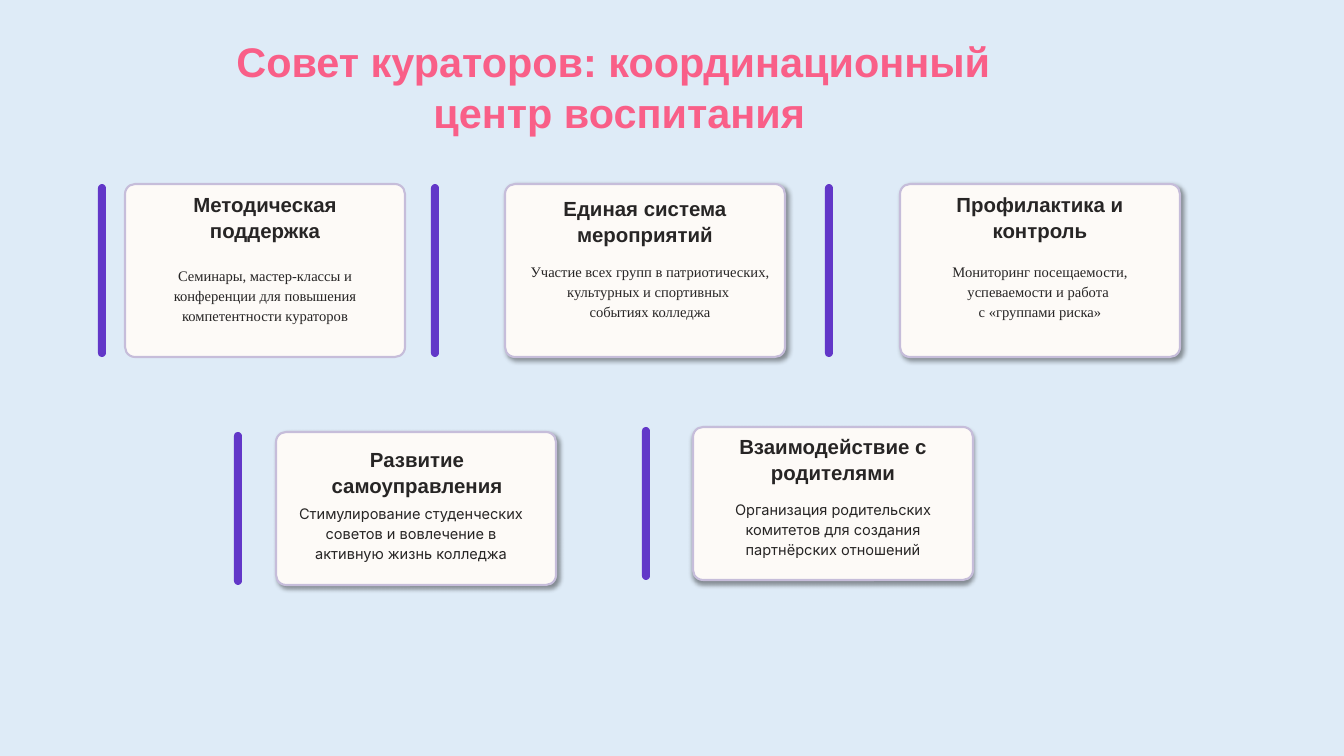
"""Build a slide of five cards on the work of the council of curators."""
from dataclasses import dataclass

from lxml import etree
from pptx import Presentation
from pptx import util as u
from pptx.dml.color import RGBColor
from pptx.enum import shapes, text
from pptx.oxml.ns import qn

PX_PER_INCH = 84
CARD_WIDTH = 280
TEXT_WIDTH = 240
HEADING_HEIGHT = 52
BAR_WIDTH = 8
CORNER = 10


@dataclass(frozen=True)
class TextStyle:
    """Describe the type of one kind of text."""
    font: str
    size: float
    leading: int
    color: str
    bold: bool = False


class Theme:
    """Hold the colours and type styles of the slide."""
    background = "DEEBF7"
    card = "FDFAF7"
    border = "C6BDDA"
    border_width = 1.8
    bar = "6237C8"
    shadow = "000000"
    title = TextStyle("Arial", 35.5, 44, "F95F88", True)
    heading = TextStyle("Arial", 17.5, 22, "272525", True)
    serif = TextStyle("Times New Roman", 12.5, 17, "272525")
    sans = TextStyle("Inter", 12.5, 17, "272525")


@dataclass(frozen=True)
class Card:
    """Describe one card, with places in px."""
    left: int
    top: int
    height: int
    bar_left: int
    heading: str
    heading_at: tuple
    body: tuple
    body_at: tuple
    body_style: TextStyle
    shadow_angle: int | None = 45


CARDS = [
    Card(125, 184, 173, 98, "Методическая поддержка", (145, 191),
         ("Семинары, мастер-классы и конференции для повышения компетентности кураторов",),
         (145, 265), Theme.serif, None),
    Card(505, 184, 173, 431, "Единая система мероприятий", (525, 195),
         ("Участие всех групп в патриотических, культурных и спортивных ", "событиях колледжа"),
         (530, 261), Theme.serif),
    Card(900, 184, 173, 825, "Профилактика и контроль", (920, 191),
         ("Мониторинг посещаемости, успеваемости и работа ", "с «группами риска»"),
         (920, 261), Theme.serif),
    Card(276, 432, 153, 234, "Развитие самоуправления", (297, 446),
         ("Стимулирование студенческих советов и вовлечение в активную жизнь колледжа",),
         (291, 503), Theme.sans),
    Card(693, 427, 153, 642, "Взаимодействие с родителями", (713, 433),
         ("Организация родительских комитетов для создания партнёрских отношений",),
         (713, 499), Theme.sans, 90),
]


def px(length):
    """Turn px into EMU."""
    return u.Inches(length / PX_PER_INCH)


def color(value):
    """Turn a hex value into a colour."""
    return RGBColor.from_string(value)


def add_text(slide, left, top, width, height, lines, style):
    """Add a centred text box with one paragraph for each line."""
    box = slide.shapes.add_textbox(px(left), px(top), px(width), px(height))
    frame = box.text_frame
    frame.word_wrap = True
    frame.margin_left = frame.margin_top = frame.margin_right = frame.margin_bottom = 0
    frame.text = "\n".join(lines)
    for paragraph in frame.paragraphs:
        paragraph.alignment = text.PP_ALIGN.CENTER
        paragraph.line_spacing = u.Pt(style.leading)
        for run in paragraph.runs:
            run.font.name = style.font
            run.font.size = u.Pt(style.size)
            run.font.bold = style.bold
            run.font.color.rgb = color(style.color)


def add_rounded(slide, left, top, width, height, radius, fill):
    """Add a rounded rectangle without a line or a shadow."""
    shape = slide.shapes.add_shape(
        shapes.MSO_SHAPE.ROUNDED_RECTANGLE, px(left), px(top), px(width), px(height))
    shape.adjustments[0] = radius / min(width, height)
    shape.shadow.inherit = False
    shape.fill.solid()
    shape.fill.fore_color.rgb = color(fill)
    shape.line.fill.background()
    return shape


def add_shadow(shape, angle):
    """Give a shape a soft outer shadow in the given direction."""
    effects = shape._element.spPr.find(qn("a:effectLst"))
    shadow = etree.SubElement(
        effects, qn("a:outerShdw"), blurRad=str(u.Pt(4)), dist=str(u.Pt(3)),
        dir=str(angle * 60000), algn="ctr", rotWithShape="0")
    tint = etree.SubElement(shadow, qn("a:srgbClr"), val=Theme.shadow)
    etree.SubElement(tint, qn("a:alpha"), val="40000")


def add_card(slide, card):
    """Add a card with its side bar, heading and body."""
    panel = add_rounded(slide, card.left, card.top, CARD_WIDTH, card.height, CORNER, Theme.card)
    panel.line.color.rgb = color(Theme.border)
    panel.line.width = u.Pt(Theme.border_width)
    if card.shadow_angle is not None:
        add_shadow(panel, card.shadow_angle)
    add_rounded(slide, card.bar_left, card.top, BAR_WIDTH, card.height, BAR_WIDTH / 2, Theme.bar)
    add_text(slide, *card.heading_at, TEXT_WIDTH, HEADING_HEIGHT, [card.heading], Theme.heading)
    add_text(slide, *card.body_at, TEXT_WIDTH, 60, card.body, card.body_style)


def main():
    """Build and save the slide."""
    presentation = Presentation()
    presentation.slide_width = u.Inches(16)
    presentation.slide_height = u.Inches(9)
    slide = presentation.slides.add_slide(presentation.slide_layouts[6])
    slide.background.fill.solid()
    slide.background.fill.fore_color.rgb = color(Theme.background)
    add_text(slide, 102, 34, 1035, 104,
             ["Совет кураторов: координационный ", "центр воспитания"], Theme.title)
    for card in CARDS:
        add_card(slide, card)
    presentation.save("out.pptx")


if __name__ == "__main__":
    main()
